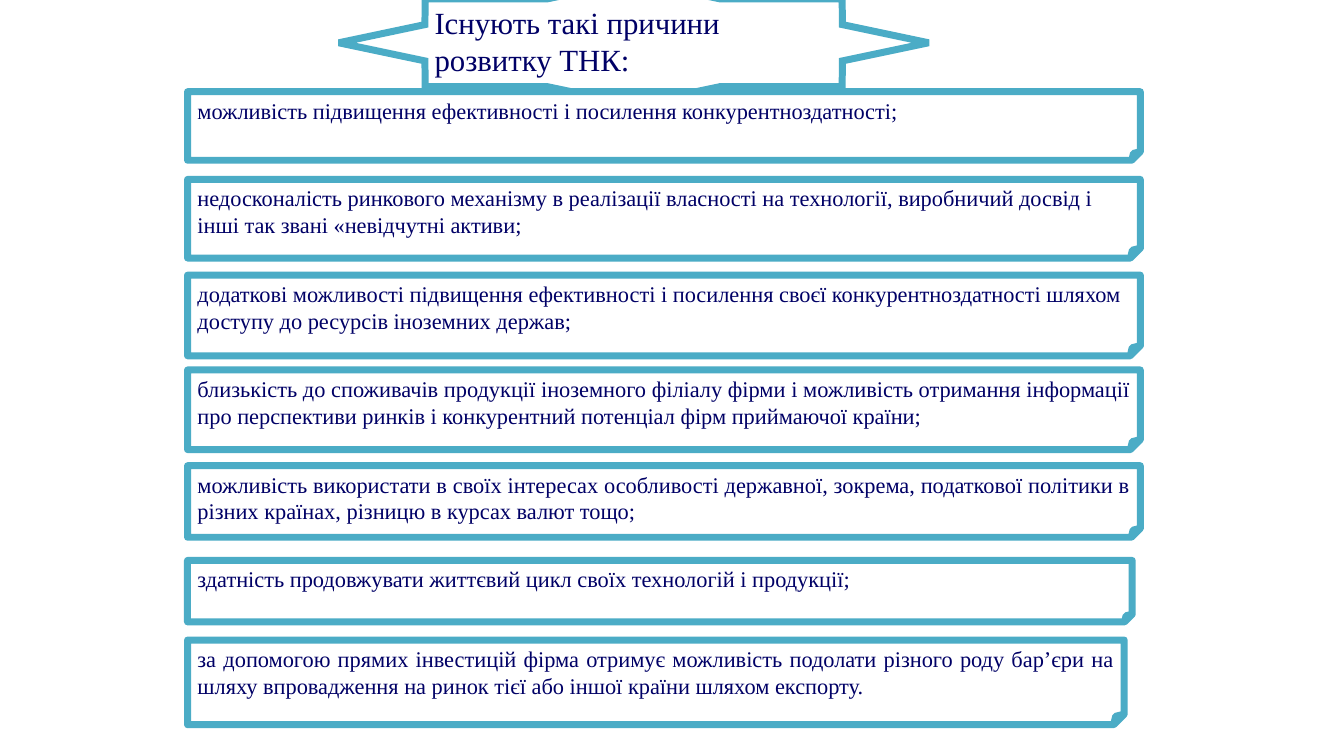
from dataclasses import dataclass

from lxml.etree import SubElement
from pptx import Presentation
from pptx.dml.color import RGBColor
from pptx.enum.shapes import MSO_SHAPE as Preset
from pptx.enum.text import MSO_ANCHOR as Anchor, MSO_AUTO_SIZE as AutoSize, PP_ALIGN as Align
from pptx.oxml.ns import qn
from pptx.shapes.autoshape import Shape
from pptx.slide import Slide
from pptx.util import Inches, Pt


@dataclass(frozen=True)
class Theme:
    font: str = "Times New Roman"
    ink: RGBColor = RGBColor(0x00, 0x00, 0x66)
    outline: RGBColor = RGBColor(0x4B, 0xAC, 0xC6)
    paper: RGBColor = RGBColor(0xFF, 0xFF, 0xFF)
    outline_width: Pt = Pt(5)
    title_size: Pt = Pt(22)
    reason_size: Pt = Pt(16)


@dataclass(frozen=True)
class Frame:
    left: float
    top: float
    width: float
    height: float


@dataclass(frozen=True)
class Reason:
    top: float
    height: float
    text: str
    align: Align = Align.JUSTIFY
    width: float = 9.45


THEME = Theme()
REASON_LEFT = 1.86
STAR = Frame(3.36, -0.19, 5.85, 1.23)
TITLE = Frame(4.21, -0.01, 4.14, 0.87)
TITLE_TEXT = "Існують такі причини розвитку ТНК:"

REASONS = [
    Reason(0.91, 0.68, "можливість підвищення ефективності і посилення конкурентноздатності;"),
    Reason(1.78, 0.78, "недосконалість ринкового механізму в реалізації власності на технології, "
           "виробничий досвід і інші так звані «невідчутні активи;", Align.LEFT),
    Reason(2.73, 0.8, "додаткові можливості підвищення ефективності і посилення своєї "
           "конкурентноздатності шляхом доступу до ресурсів іноземних держав;", Align.LEFT),
    Reason(3.67, 0.79, "близькість до споживачів продукції іноземного філіалу фірми і можливість "
           "отримання інформації про перспективи ринків і конкурентний потенціал фірм "
           "приймаючої країни;"),
    Reason(4.62, 0.71, "можливість використати в своїх інтересах особливості державної, зокрема, "
           "податкової політики в різних країнах, різницю в курсах валют тощо;"),
    Reason(5.56, 0.61, "здатність продовжувати життєвий цикл своїх технологій і продукції;",
           Align.LEFT, 9.37),
    Reason(6.35, 0.84, "за допомогою прямих інвестицій фірма отримує можливість подолати різного "
           "роду бар’єри на шляху впровадження на ринок тієї або іншої країни шляхом експорту.",
           width=9.29),
]


def apply_format(target: object, values: dict[str, object]) -> None:
    for name, value in values.items():
        setattr(target, name, value)


def set_adjustment(shape: Shape, value: float) -> None:
    """Write the single adjust value of a preset, also where python-pptx lists none."""
    geometry = shape.element.spPr.find(qn("a:prstGeom"))
    for guides in geometry.findall(qn("a:avLst")):
        geometry.remove(guides)
    guide = SubElement(SubElement(geometry, qn("a:avLst")), qn("a:gd"))
    guide.set("name", "adj")
    guide.set("fmla", f"val {round(value * 100000)}")


def add_outlined(page: Slide, preset: Preset, frame: Frame, adjustment: float) -> Shape:
    """Add a paper-filled preset shape with the theme outline."""
    shape = page.shapes.add_shape(preset, Inches(frame.left), Inches(frame.top),
                                  Inches(frame.width), Inches(frame.height))
    set_adjustment(shape, adjustment)
    shape.shadow.inherit = False
    shape.fill.solid()
    shape.fill.fore_color.rgb = THEME.paper
    shape.line.color.rgb = THEME.outline
    shape.line.width = THEME.outline_width
    return shape


def write_text(shape: Shape, text: str, size: Pt, align: Align) -> None:
    box = shape.text_frame
    apply_format(box, {
        "word_wrap": True, "auto_size": AutoSize.NONE, "vertical_anchor": Anchor.TOP,
        "margin_left": Inches(0.1), "margin_right": Inches(0.1),
        "margin_top": Inches(0.05), "margin_bottom": Inches(0.05),
    })
    para = box.paragraphs[0]
    para.alignment = align
    span = para.add_run()
    span.text = text
    apply_format(span.font, {"name": THEME.font, "size": size})
    span.font.color.rgb = THEME.ink


def add_title(page: Slide) -> None:
    """Place the title placeholder over a sharp-cornered star."""
    title = page.shapes.title
    apply_format(title, {name: Inches(getattr(TITLE, name))
                         for name in ("left", "top", "width", "height")})
    write_text(title, TITLE_TEXT, THEME.title_size, Align.LEFT)
    star = add_outlined(page, Preset.STAR_8_POINT, STAR, 0.383)
    outline = star.element.spPr.find(qn("a:ln"))
    SubElement(outline, qn("a:miter")).set("lim", "800000")
    title.element.addprevious(star.element)


def add_reason(page: Slide, reason: Reason) -> None:
    frame = Frame(REASON_LEFT, reason.top, reason.width, reason.height)
    card = add_outlined(page, Preset.FOLDED_CORNER, frame, 0.125)
    write_text(card, reason.text, THEME.reason_size, reason.align)


def main() -> None:
    deck = Presentation()
    apply_format(deck, {"slide_width": Inches(13.33), "slide_height": Inches(7.5)})
    page = deck.slides.add_slide(deck.slide_layouts.get_by_name("Title Only"))
    add_title(page)
    for reason in REASONS:
        add_reason(page, reason)
    deck.save("out.pptx")


if __name__ == "__main__":
    main()
